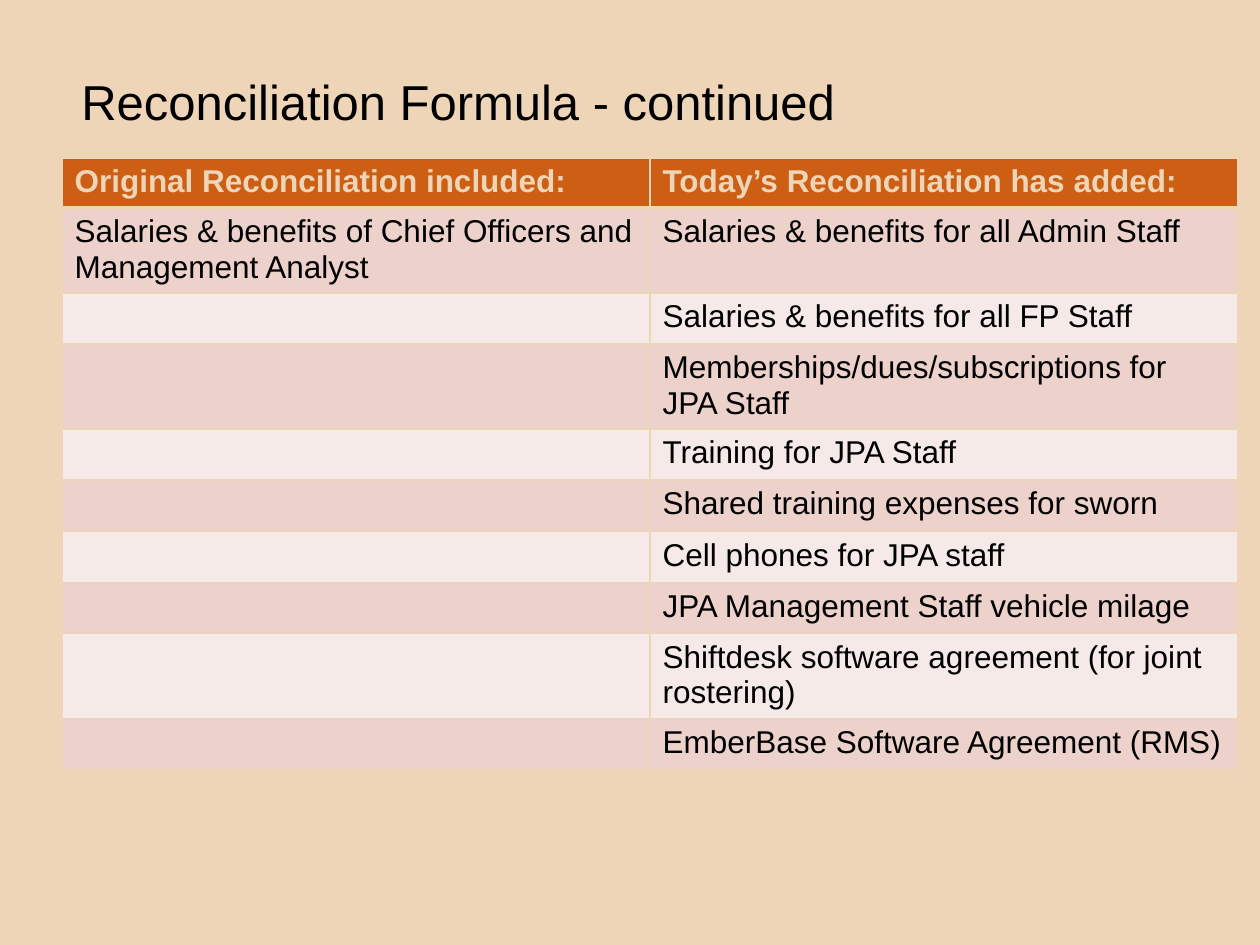
from dataclasses import dataclass

from pptx import Presentation
from pptx import util as u
from pptx.dml.color import RGBColor
from pptx.enum import text
from pptx.oxml import parse_xml
from pptx.oxml.ns import nsdecls

PX_PER_INCH = 126
SAND, ORANGE, ROSE, PALE, BLACK = "EED5B7", "CD5F15", "EDD2CC", "F6EAE8", "000000"


@dataclass
class Row:
    left: str
    right: str
    height: int = 50


ROWS = [
    Row("Original Reconciliation included:", "Today’s Reconciliation has added:"),
    Row("Salaries & benefits of Chief Officers and Management Analyst",
        "Salaries & benefits for all Admin Staff", 85),
    Row("", "Salaries & benefits for all FP Staff"),
    Row("", "Memberships/dues/subscriptions for JPA Staff", 85),
    Row("", "Training for JPA Staff"),
    Row("", "Shared training expenses for sworn"),
    Row("", "Cell phones for JPA staff"),
    Row("", "JPA Management Staff vehicle milage"),
    Row("", "Shiftdesk software agreement (for joint rostering)", 85),
    Row("", "EmberBase Software Agreement (RMS)"),
]


def px(n: int) -> int:
    return round(n * 914400 / PX_PER_INCH)


def rgb(value: str) -> RGBColor:
    return RGBColor.from_string(value)


def write(tf, content: str, *, size: int = 18, color: str = BLACK, bold: bool = False) -> None:
    p = tf.paragraphs[0]
    p.font.size = u.Pt(size)
    if not content:
        return
    r = p.add_run()
    r.text = content
    r.font.name = "Arial"
    r.font.size = u.Pt(size)
    r.font.bold = bold
    r.font.color.rgb = rgb(color)


def set_borders(cell, color: str, top: int, bottom: int) -> None:
    tc_pr = cell._tc.get_or_add_tcPr()
    for i, (side, width) in enumerate((("L", 1), ("R", 1), ("T", top), ("B", bottom))):
        tc_pr.insert(i, parse_xml(
            f'<a:ln{side} {nsdecls("a")} w="{u.Pt(width)}"><a:solidFill>'
            f'<a:srgbClr val="{color}"/></a:solidFill></a:ln{side}>'))


def draw_table(s, rows: list[Row], x: int, y: int, width: int) -> None:
    height = sum(row.height for row in rows)
    table = s.shapes.add_table(len(rows), 2, px(x), px(y), px(width), px(height)).table
    for col in table.columns:
        col.width = px(width // 2)
    for i, row in enumerate(rows):
        table.rows[i].height = px(row.height)
        header = i == 0
        fill = ORANGE if header else ROSE if i % 2 else PALE
        for j, content in enumerate((row.left, row.right)):
            cell = table.cell(i, j)
            cell.fill.solid()
            cell.fill.fore_color.rgb = rgb(fill)
            set_borders(cell, SAND, top=3 if i == 1 else 1, bottom=3 if header else 1)
            write(cell.text_frame, content, color=SAND if header else BLACK, bold=header)


def draw_title(s, content: str, x: int, y: int, width: int, height: int) -> None:
    tf = s.shapes.add_textbox(px(x), px(y), px(width), px(height)).text_frame
    tf.word_wrap = True
    tf.vertical_anchor = text.MSO_ANCHOR.MIDDLE
    write(tf, content, size=28)


def main() -> None:
    prs = Presentation()
    prs.slide_width, prs.slide_height = px(1260), px(945)
    s = prs.slides.add_slide(prs.slide_layouts[6])
    s.background.fill.solid()
    s.background.fill.fore_color.rgb = rgb(SAND)
    draw_table(s, ROWS, 62, 158, 1176)
    draw_title(s, "Reconciliation Formula - continued", 69, 38, 1169, 125)
    prs.save("out.pptx")


if __name__ == "__main__":
    main()
